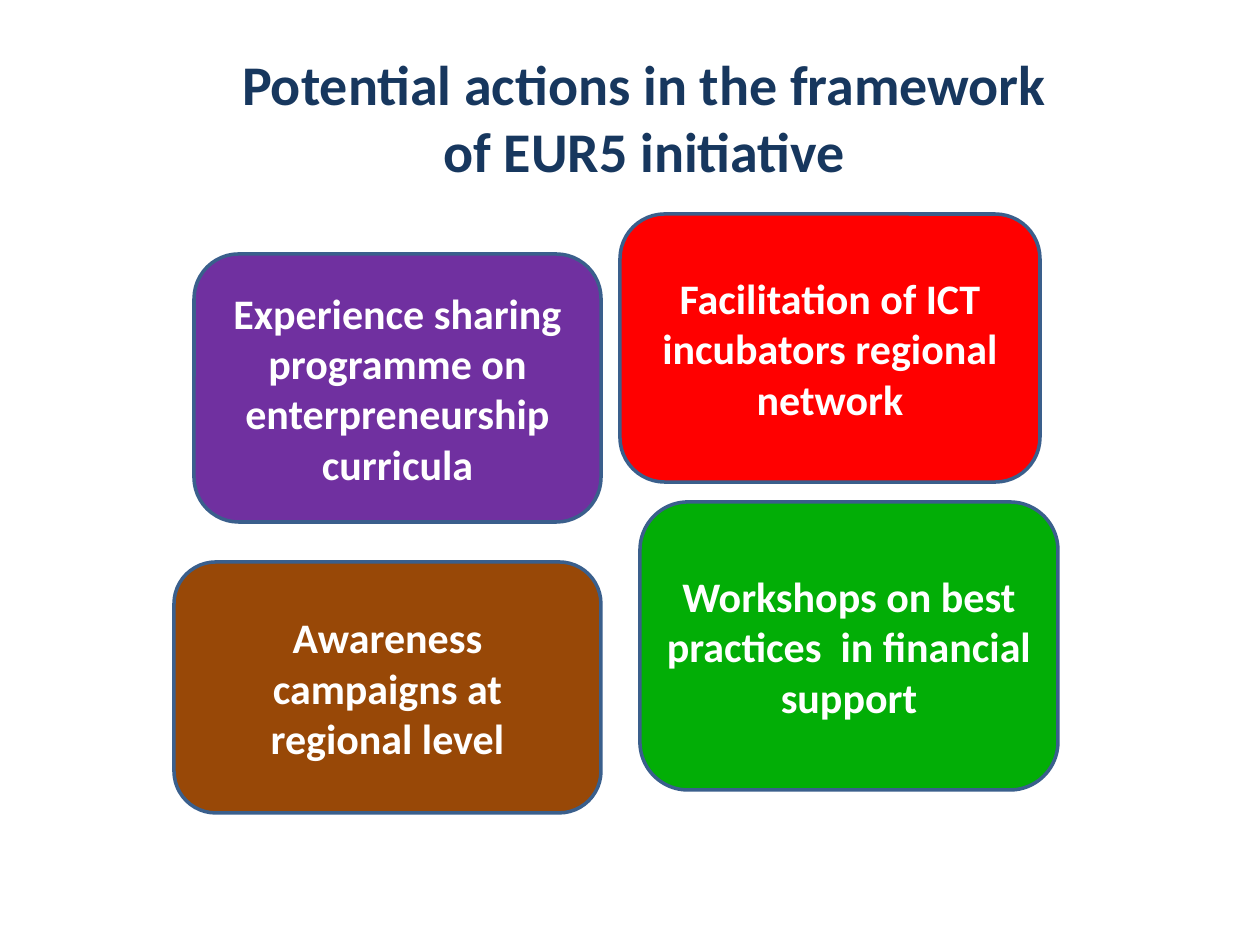
from dataclasses import dataclass

from pptx import Presentation
from pptx.dml.color import RGBColor
from pptx.enum.shapes import MSO_SHAPE as Shape
from pptx.enum.text import MSO_ANCHOR as Anchor, MSO_AUTO_SIZE as AutoSize, PP_ALIGN as Align
from pptx.util import Emu, Pt

PX_PER_INCH = 126
FONT = "Calibri"
OUTLINE = "3A5F8C"
WHITE = "FFFFFF"
NAVY = "17375E"


@dataclass(frozen=True)
class Action:
    """A coloured card naming one potential action, placed in px."""
    left: int
    top: int
    width: int
    height: int
    fill: str
    text: str


ACTIONS = [
    Action(194, 254, 407, 268, "7030A0",
           "Experience sharing programme on enterpreneurship curricula"),
    Action(620, 214, 420, 268, "FF0000",
           "Facilitation of ICT incubators regional network"),
    Action(174, 562, 427, 251, "984807",
           "Awareness campaigns at regional level"),
    Action(640, 502, 418, 288, "02AE06",
           "Workshops on best practices  in financial support"),
]


def px(length: int) -> Emu:
    """Turn px into EMU."""
    return Emu(round(length * 914400 / PX_PER_INCH))


def color(code: str) -> RGBColor:
    """Turn a hex string into a colour."""
    return RGBColor.from_string(code)


def write(frame, text: str, size: int, code: str, anchor: Anchor) -> None:
    """Fill a text frame with one centred bold paragraph."""
    frame.text = text
    frame.word_wrap = True
    frame.auto_size = AutoSize.NONE
    frame.vertical_anchor = anchor
    para = frame.paragraphs[0]
    para.alignment = Align.CENTER
    para.font.name = FONT
    para.font.size = Pt(size)
    para.font.bold = True
    para.font.color.rgb = color(code)


def add_title(page, text: str) -> None:
    """Place and format the slide title."""
    title = page.shapes.title
    title.left, title.top = px(223), px(43)
    title.width, title.height = px(843), px(149)
    write(title.text_frame, text, 32, NAVY, Anchor.TOP)


def add_action(page, action: Action) -> None:
    """Draw one action as a rounded card."""
    card = page.shapes.add_shape(
        Shape.ROUNDED_RECTANGLE, px(action.left), px(action.top),
        px(action.width), px(action.height))
    card.shadow.inherit = False
    card.fill.solid()
    card.fill.fore_color.rgb = color(action.fill)
    card.line.color.rgb = color(OUTLINE)
    card.line.width = Pt(2)
    write(card.text_frame, action.text, 24, WHITE, Anchor.MIDDLE)


def main() -> None:
    """Build the slide and save it."""
    deck = Presentation()
    deck.slide_width, deck.slide_height = px(1260), px(945)
    page = deck.slides.add_slide(deck.slide_layouts.get_by_name("Title Only"))
    add_title(page, "Potential actions in the framework of EUR5 initiative")
    for action in ACTIONS:
        add_action(page, action)
    deck.save("out.pptx")


if __name__ == "__main__":
    main()
